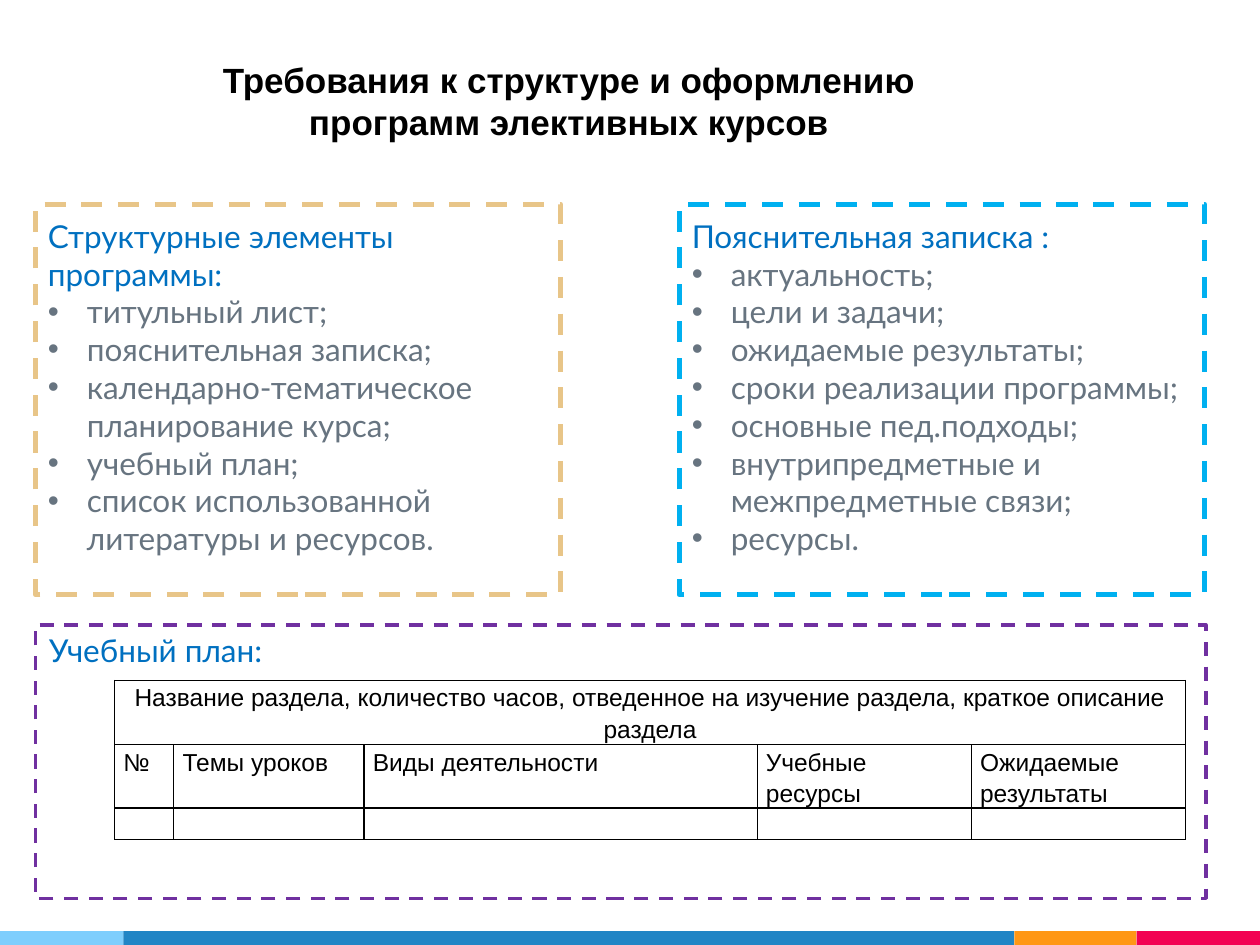
from lxml import etree
from pptx import Presentation
from pptx.dml.color import RGBColor
from pptx.enum.dml import MSO_LINE
from pptx.enum.shapes import MSO_SHAPE
from pptx.enum.text import MSO_ANCHOR, MSO_AUTO_SIZE, PP_ALIGN
from pptx.oxml.ns import qn
from pptx.util import Inches, Pt

RECTANGLE = MSO_SHAPE.RECTANGLE
DASH = MSO_LINE.DASH
CENTER, JUSTIFY, LEFT = PP_ALIGN.CENTER, PP_ALIGN.JUSTIFY, PP_ALIGN.LEFT
TOP, BOTTOM = MSO_ANCHOR.TOP, MSO_ANCHOR.BOTTOM
NO_AUTOFIT = MSO_AUTO_SIZE.NONE

BLACK, BLUE, GRAY = "000000", "0070C0", "677480"
STRIPES = [("7ECEFD", 0.98), ("2185C5", 7.07), ("FF9715", 0.97), ("F20253", 0.98)]
STRUCTURE = [
    "титульный лист;",
    "пояснительная записка;",
    "календарно-тематическое планирование курса;",
    "учебный план;",
    "список использованной литературы и ресурсов.",
]
NOTE = [
    "актуальность;",
    "цели и задачи;",
    "ожидаемые результаты;",
    "сроки реализации программы;",
    "основные пед.подходы;",
    "внутрипредметные и межпредметные связи;",
    "ресурсы.",
]
PLAN_HEADING = "Название раздела, количество часов, отведенное на изучение раздела, краткое описание раздела"
PLAN_COLUMNS = [
    ("№", 0.47),
    ("Темы уроков", 1.51),
    ("Виды деятельности", 3.12),
    ("Учебные ресурсы", 1.7),
    ("Ожидаемые результаты", 1.7),
]
ROW_HEIGHTS = [0.51, 0.5, 0.25]


def color(value):
    """Turn a hex string into a colour."""
    return RGBColor.from_string(value)


def place(shape, left, top, width, height):
    """Move and size a shape, in inches."""
    shape.left, shape.top = Inches(left), Inches(top)
    shape.width, shape.height = Inches(width), Inches(height)


def add_span(para, text, font, size, hue, bold=False):
    """Append one formatted run to a paragraph."""
    span = para.add_run()
    span.text = text
    span.font.name, span.font.size, span.font.bold = font, Pt(size), bold
    span.font.color.rgb = color(hue)


def set_frame(frame, anchor, inset=0.1):
    """Give a text frame wrapping, an anchor and equal insets."""
    frame.word_wrap, frame.auto_size, frame.vertical_anchor = True, NO_AUTOFIT, anchor
    frame.margin_left = frame.margin_right = Inches(inset)
    frame.margin_top = frame.margin_bottom = Inches(inset)


def set_outline(shape, hue, width):
    """Draw a dashed outline around an unfilled shape."""
    shape.fill.background()
    shape.line.color.rgb = color(hue)
    shape.line.width, shape.line.dash_style = Pt(width), DASH


def set_bullet(para, bulleted):
    """Set a gray hanging bullet, or remove the inherited one."""
    para.alignment = LEFT
    para.space_before = para.space_after = Pt(0)
    properties = para._p.get_or_add_pPr()
    indent = Inches(0.31) if bulleted else 0
    properties.set("marL", str(indent))
    properties.set("indent", str(-indent))
    if not bulleted:
        etree.SubElement(properties, qn("a:buNone"))
        return
    bullet_color = etree.SubElement(properties, qn("a:buClr"))
    etree.SubElement(bullet_color, qn("a:srgbClr"), val=GRAY)
    etree.SubElement(properties, qn("a:buFont"), typeface="Arial")
    etree.SubElement(properties, qn("a:buChar"), char="•")


def fill_title(title):
    """Place and write the slide title."""
    place(title, 0.98, 0.3, 7.07, 0.93)
    set_frame(title.text_frame, BOTTOM)
    para = title.text_frame.paragraphs[0]
    para.alignment = CENTER
    text = "Требования к структуре и оформлению программ элективных курсов"
    add_span(para, text, "Arial", 20, BLACK, bold=True)


def fill_list(body, left, hue, heading, items):
    """Write a heading and bulleted items in a dashed placeholder."""
    place(body, left, 1.62, 4.17, 3.1)
    set_outline(body, hue, 3)
    frame = body.text_frame
    set_frame(frame, TOP)
    set_bullet(frame.paragraphs[0], False)
    add_span(frame.paragraphs[0], heading, "Lato", 18, BLUE)
    for item in items:
        para = frame.add_paragraph()
        set_bullet(para, True)
        add_span(para, item, "Lato", 18, GRAY)


def add_stripes(page):
    """Add the coloured stripes along the bottom edge."""
    left = 0
    for hue, width in STRIPES:
        stripe = page.shapes.add_shape(
            RECTANGLE, Inches(left), Inches(7.39), Inches(width), Inches(0.11))
        stripe.shadow.inherit = False
        stripe.fill.solid()
        stripe.fill.fore_color.rgb = color(hue)
        stripe.line.fill.background()
        left += width


def format_cell(cell):
    """Give a cell thin black borders, no fill and tight margins."""
    properties = cell._tc.get_or_add_tcPr()
    for side in ("lnL", "lnR", "lnT", "lnB"):
        border = etree.SubElement(properties, qn(f"a:{side}"), w=str(Pt(0.75)))
        fill = etree.SubElement(border, qn("a:solidFill"))
        etree.SubElement(fill, qn("a:srgbClr"), val=BLACK)
    cell.fill.background()
    cell.margin_left = cell.margin_right = Inches(0.07)
    cell.margin_top = cell.margin_bottom = 0
    para = cell.text_frame.paragraphs[0]
    para.line_spacing = 1.15
    etree.SubElement(para._p, qn("a:endParaRPr"), sz="1400")


def write_cell(cell, text, alignment):
    """Write one aligned line of cell text."""
    para = cell.text_frame.paragraphs[0]
    para.alignment = alignment
    add_span(para, text, "Arial", 14, BLACK)


def add_plan_table(page):
    """Add the curriculum table with its merged heading."""
    frame = page.shapes.add_table(
        len(ROW_HEIGHTS), len(PLAN_COLUMNS), Inches(0.91), Inches(5.4),
        Inches(8.5), Inches(sum(ROW_HEIGHTS)))
    table = frame.table
    table.first_row = table.horz_banding = False
    for row, height in zip(table.rows, ROW_HEIGHTS):
        row.height = Inches(height)
        for cell in row.cells:
            format_cell(cell)
    table.cell(0, 0).merge(table.cell(0, len(PLAN_COLUMNS) - 1))
    write_cell(table.cell(0, 0), PLAN_HEADING, CENTER)
    for index, (label, width) in enumerate(PLAN_COLUMNS):
        table.columns[index].width = Inches(width)
        write_cell(table.cell(1, index), label, JUSTIFY)


def add_plan_frame(page):
    """Add the curriculum heading and its dashed frame."""
    box = page.shapes.add_textbox(Inches(0.29), Inches(4.96), Inches(2.44), Inches(0.4))
    box.text_frame.word_wrap = True
    add_span(box.text_frame.paragraphs[0], "Учебный план:", "Lato", 18, BLUE)
    border = page.shapes.add_shape(
        RECTANGLE, Inches(0.28), Inches(4.96), Inches(9.29), Inches(2.17))
    border.shadow.inherit = False
    set_outline(border, "7030A0", 2)


def main():
    """Build the slide and save the deck."""
    deck = Presentation()
    deck.slide_width, deck.slide_height = Inches(10), Inches(7.5)
    page = deck.slides.add_slide(deck.slide_layouts[3])
    title, structure, note = page.placeholders
    add_stripes(page)
    fill_title(title)
    fill_list(structure, 0.28, "E8C588", "Структурные элементы программы:", STRUCTURE)
    fill_list(note, 5.39, "00B0F0", "Пояснительная записка :", NOTE)
    add_plan_table(page)
    add_plan_frame(page)
    deck.save("out.pptx")


if __name__ == "__main__":
    main()
